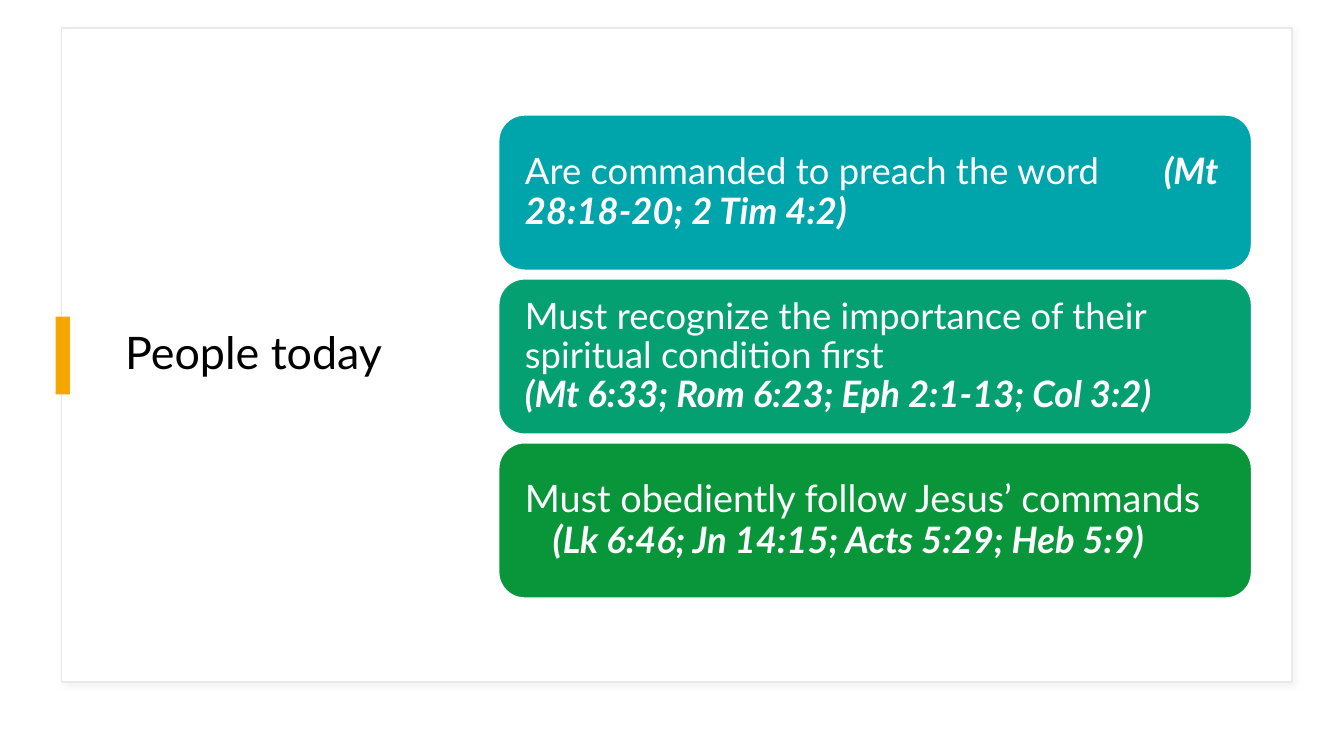
from dataclasses import dataclass

from lxml.etree import SubElement
from pptx import Presentation
from pptx.dml.color import RGBColor
from pptx.enum.shapes import MSO_SHAPE
from pptx.enum.text import MSO_ANCHOR, PP_ALIGN
from pptx.oxml.ns import qn
from pptx.util import Cm, Pt

# Content: each card is a list of (text, is_reference, size name);
# "\t" jumps to the tab stop and "\n" starts a new line
TITLE = "People today"
CARDS = [
    {"runs": [("Are commanded to preach the word\t", False, "card"),
              ("(Mt 28:18-20; 2 Tim 4:2)", True, "card")],
     "tab": Cm(16.1)},
    {"runs": [("Must recognize the importance of their spiritual condition first\n", False, "card"),
              ("(Mt 6:33; Rom 6:23; Eph 2:1-13; Col 3:2)", True, "card")]},
    {"runs": [("Must obediently follow Jesus’ commands\n", False, "card_large"),
              ("(", True, "card_large"),
              ("Lk 6:46; Jn 14:15; Acts 5:29; Heb 5:9)", True, "card")],
     "hanging": Cm(0.7)},
]


@dataclass(frozen=True)
class Theme:
    font: str = "Lato"
    sizes = {"title": 32, "card": 26, "card_large": 27}
    white: str = "FFFFFF"
    title: str = "000000"
    panel_line: str = "E9E9E9"
    shadow: str = "D9D9D9"
    accent: str = "F5A700"
    cards: tuple = ("00A5AB", "05A071", "09963B")


THEME = Theme()

# Layout
SLIDE_SIZE = Cm(33.87), Cm(19.05)
PANEL_BOX = Cm(1.55), Cm(0.71), Cm(31.01), Cm(16.48)
TITLE_BOX = Cm(2.9), Cm(1.4), Cm(8.3), Cm(15.11)
ACCENT_BOX = Cm(1.4), Cm(7.98), Cm(0.36), Cm(1.96)
CARD_LEFT, CARD_TOP = Cm(12.57), Cm(2.9)
CARD_WIDTH, CARD_HEIGHT, CARD_GAP = Cm(18.97), Cm(3.91), Cm(0.22)
CARD_MARGIN = Cm(0.47)


def add_box(slide, kind, box, fill, line=None):
    shape = slide.shapes.add_shape(kind, *box)
    shape.shadow.inherit = False
    shape.fill.solid()
    shape.fill.fore_color.rgb = RGBColor.from_string(fill)
    if line:
        shape.line.color.rgb = RGBColor.from_string(line)
        shape.line.width = Pt(1)
    else:
        shape.line.fill.background()
    return shape


def add_soft_shadow(shape):
    effects = shape._element.spPr.find(qn("a:effectLst"))
    shadow = SubElement(effects, qn("a:outerShdw"), blurRad=str(Pt(4)),
                        dist=str(Pt(3)), dir="2700000", rotWithShape="0")
    color = SubElement(shadow, qn("a:srgbClr"), val=THEME.shadow)
    SubElement(color, qn("a:alpha"), val="30000")


def add_text(paragraph, text, *, size, color, bold=False, italic=False):
    """Add one formatted run, followed by a line break if the text ends in one."""
    paragraph.alignment = PP_ALIGN.LEFT
    paragraph.line_spacing = 0.9
    run = paragraph.add_run()
    run.text = text.rstrip("\n")
    run.font.name = THEME.font
    run.font.size = Pt(THEME.sizes[size])
    run.font.color.rgb = RGBColor.from_string(color)
    run.font.bold, run.font.italic = bold, italic
    if text.endswith("\n"):
        paragraph.add_line_break()


def add_card(slide, index, card):
    top = CARD_TOP + index * (CARD_HEIGHT + CARD_GAP)
    shape = add_box(slide, MSO_SHAPE.ROUNDED_RECTANGLE,
                    (CARD_LEFT, top, CARD_WIDTH, CARD_HEIGHT),
                    THEME.cards[index], THEME.white)
    frame = shape.text_frame
    frame.word_wrap = True
    frame.vertical_anchor = MSO_ANCHOR.MIDDLE
    frame.margin_left = frame.margin_right = CARD_MARGIN
    paragraph = frame.paragraphs[0]
    for text, is_reference, size in card["runs"]:
        add_text(paragraph, text, size=size, color=THEME.white,
                 bold=is_reference, italic=is_reference)
    properties = paragraph._p.get_or_add_pPr()
    if "hanging" in card:
        properties.set("marL", str(card["hanging"]))
        properties.set("indent", str(-card["hanging"]))
    if "tab" in card:
        tabs = SubElement(properties, qn("a:tabLst"))
        SubElement(tabs, qn("a:tab"), pos=str(card["tab"]), algn="l")


def main():
    presentation = Presentation()
    presentation.slide_width, presentation.slide_height = SLIDE_SIZE
    slide = presentation.slides.add_slide(presentation.slide_layouts[5])

    # Panel behind everything else
    panel = add_box(slide, MSO_SHAPE.RECTANGLE, PANEL_BOX, THEME.white, THEME.panel_line)
    add_soft_shadow(panel)

    # Title, brought in front of the panel
    title = slide.shapes.title
    title.left, title.top, title.width, title.height = TITLE_BOX
    title.text_frame.vertical_anchor = MSO_ANCHOR.MIDDLE
    add_text(title.text_frame.paragraphs[0], TITLE, size="title", color=THEME.title)
    panel._element.addnext(title._element)

    # Accent bar and cards
    add_box(slide, MSO_SHAPE.RECTANGLE, ACCENT_BOX, THEME.accent)
    for index, card in enumerate(CARDS):
        add_card(slide, index, card)

    presentation.save("out.pptx")


if __name__ == "__main__":
    main()
